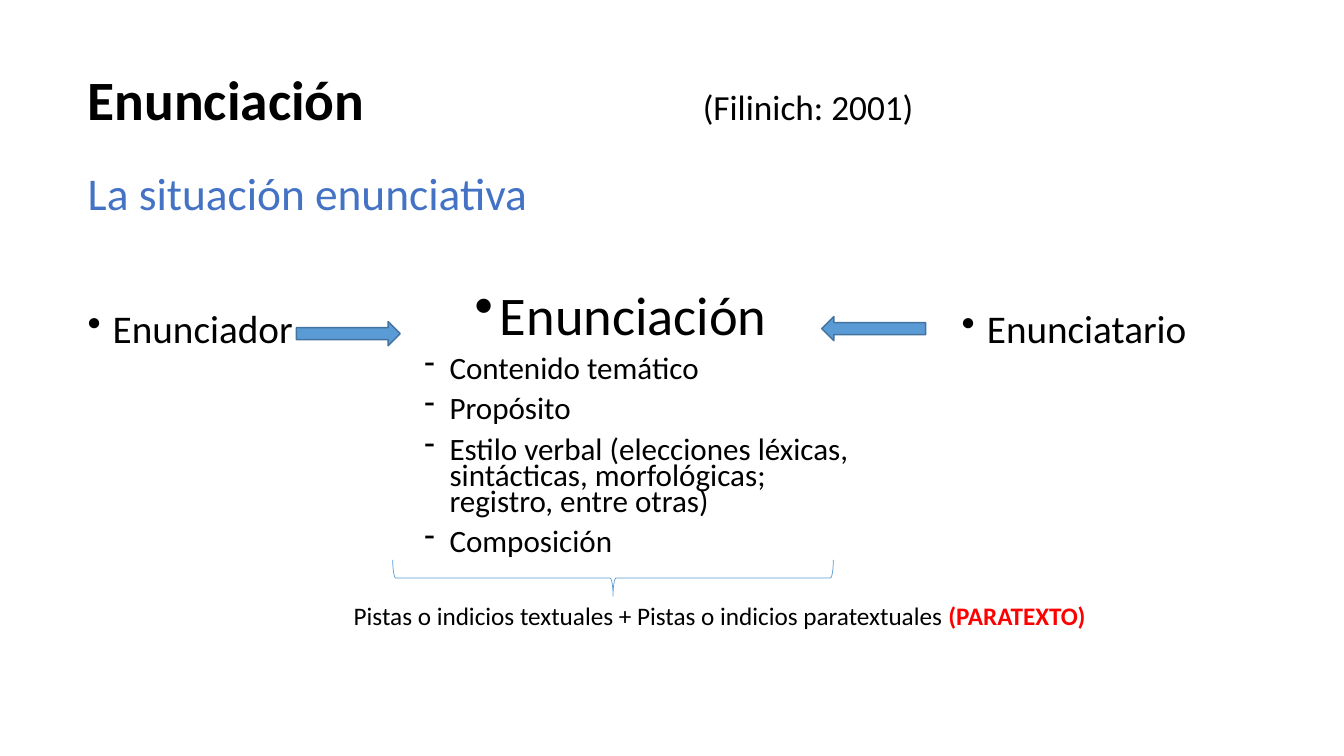
from lxml import etree
from pptx import Presentation
from pptx.dml.color import RGBColor
from pptx.enum.shapes import MSO_SHAPE
from pptx.enum.text import MSO_ANCHOR, MSO_AUTO_SIZE, PP_ALIGN
from pptx.oxml.ns import qn
from pptx.util import Inches, Pt

ARROW, BRACE = MSO_SHAPE.RIGHT_ARROW, MSO_SHAPE.RIGHT_BRACE
TOP, MIDDLE = MSO_ANCHOR.TOP, MSO_ANCHOR.MIDDLE
NO_FIT, LEFT = MSO_AUTO_SIZE.NONE, PP_ALIGN.LEFT
TITLE_ONLY = 5
BLACK, RED, HEADING = "000000", "FF0000", "4472C4"
BLUE, BLUE_EDGE = "5B9BD5", "43739E"


def rgb(value):
    return RGBColor.from_string(value)


class Deck:
    """Holds the font and the current slide, and adds styled elements to it."""

    def __init__(self, prs, font="Calibri"):
        self.font = font
        self.s = prs.slides.add_slide(prs.slide_layouts[TITLE_ONLY])

    def frame(self, sp, anchor=TOP):
        tf = sp.text_frame
        tf.word_wrap = True
        tf.auto_size = NO_FIT
        tf.vertical_anchor = anchor
        tf.margin_left = tf.margin_right = Inches(0.1)
        tf.margin_top = tf.margin_bottom = Inches(0.05)
        return tf

    def title(self, x, y, w, h):
        sp = self.s.shapes.title
        sp.left, sp.top, sp.width, sp.height = map(Inches, (x, y, w, h))
        return self.frame(sp, MIDDLE)

    def text(self, x, y, w, h):
        return self.frame(self.s.shapes.add_textbox(*map(Inches, (x, y, w, h))))

    def paragraph(self, tf, runs, spacing=1.0, before=0, bullet=None, margin=0.25, tab=None):
        p = tf.paragraphs[0] if not tf.paragraphs[0].runs else tf.add_paragraph()
        p.alignment = LEFT
        p.line_spacing = spacing
        p.space_before = Pt(before)
        pPr = p._p.get_or_add_pPr()
        if bullet:
            pPr.set("marL", str(Inches(margin)))
            pPr.set("indent", str(Inches(-0.25)))
            etree.SubElement(pPr, qn("a:buChar"), char=bullet)
        if tab:
            tabs = etree.SubElement(pPr, qn("a:tabLst"))
            etree.SubElement(tabs, qn("a:tab"), pos=str(Inches(tab)), algn="l")
        for text, size, color, bold in runs:
            r = p.add_run()
            r.text = text
            r.font.name = self.font
            r.font.size = Pt(size)
            r.font.bold = bold
            r.font.color.rgb = rgb(color)

    def shape(self, kind, x, y, w, h, line, width, fill=None, rotation=0):
        sp = self.s.shapes.add_shape(kind, *map(Inches, (x, y, w, h)))
        sp.shadow.inherit = False
        sp.rotation = rotation
        if fill:
            sp.fill.solid()
            sp.fill.fore_color.rgb = rgb(fill)
        else:
            sp.fill.background()
        sp.line.color.rgb = rgb(line)
        sp.line.width = Pt(width)


def main():
    prs = Presentation()
    prs.slide_width, prs.slide_height = Inches(13.33), Inches(7.5)
    deck = Deck(prs)

    tf = deck.title(0.77, 0.73, 11.5, 1.45)
    deck.paragraph(tf, [("Enunciación\t", 39.6, BLACK, True),
                        ("(Filinich: 2001)", 25.2, BLACK, False)], 0.9, tab=6.1)
    deck.paragraph(tf, [("La situación enunciativa", 32.4, HEADING, False)], 0.9, 28)

    tf = deck.text(4.11, 2.92, 4.55, 3.16)
    deck.paragraph(tf, [("Enunciación", 38.9, BLACK, False)], 0.7, 5, "•", 0.75)
    for feature in ("Contenido temático", "Propósito",
                    "Estilo verbal (elecciones léxicas, sintácticas, "
                    "morfológicas; registro, entre otras)", "Composición"):
        deck.paragraph(tf, [(feature, 22.2, BLACK, False)], 0.7, 10, "-")

    for x, role in ((0.77, "Enunciador"), (9.44, "Enunciatario")):
        tf = deck.text(x, 3.02, 2.94, 1.35)
        deck.paragraph(tf, [(role, 28, BLACK, False)], 0.9, 10, "•")

    for x, y, rotation in ((2.94, 3.19, 0), (8.15, 3.14, 180)):
        deck.shape(ARROW, x, y, 1.03, 0.24, BLUE_EDGE, 1, BLUE, rotation)
    deck.shape(BRACE, 5.9, 3.55, 0.36, 4.37, BLUE, 0.5, rotation=90)

    tf = deck.text(3.41, 5.91, 8.05, 0.4)
    deck.paragraph(tf, [
        ("Pistas o indicios textuales + Pistas o indicios paratextuales ", 18, BLACK, False),
        ("(PARATEXTO)", 18, RED, True)])

    prs.save("out.pptx")


if __name__ == "__main__":
    main()
